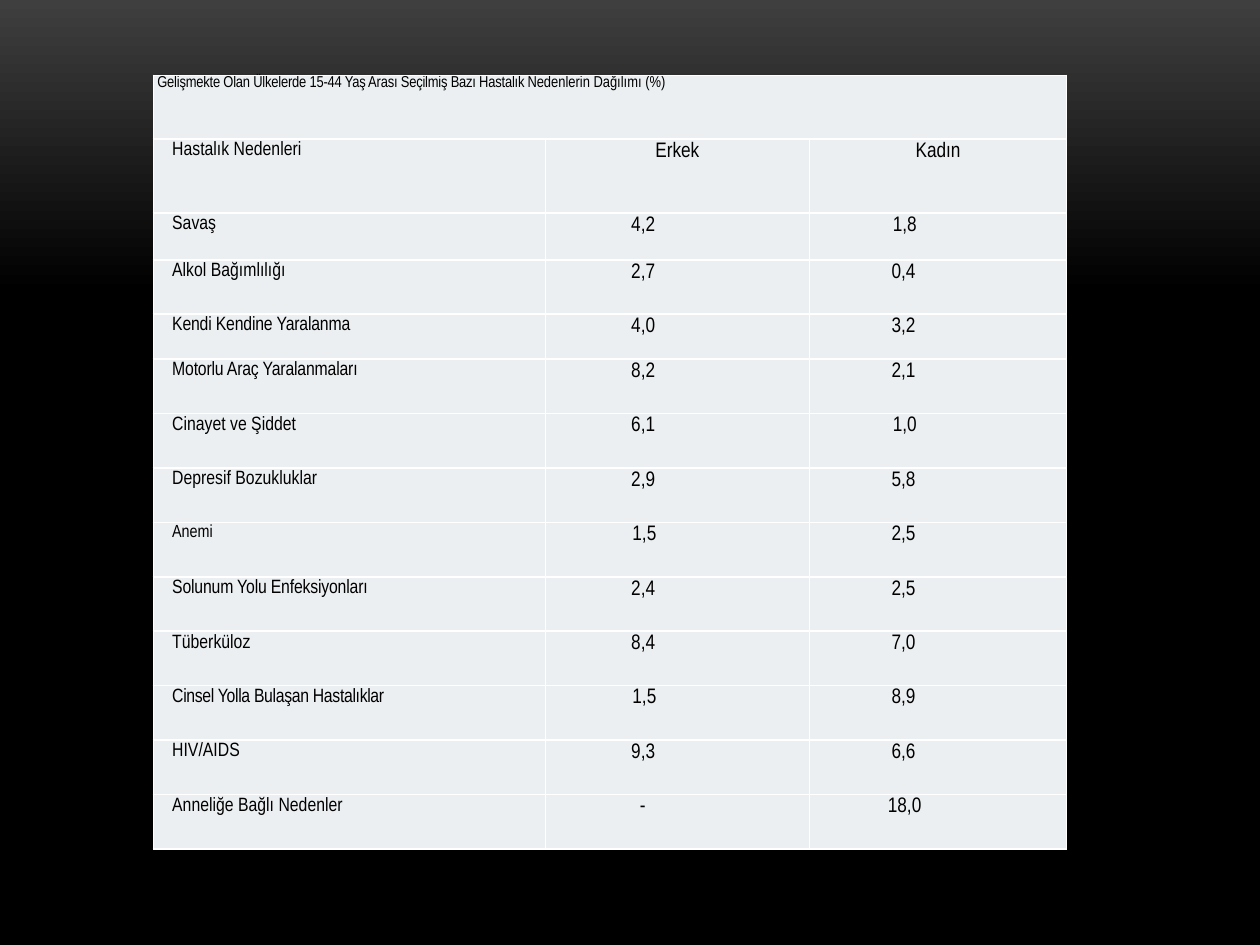
from lxml import etree
from pptx import Presentation
from pptx.dml.color import RGBColor
from pptx.enum.text import MSO_ANCHOR, PP_ALIGN
from pptx.oxml.ns import qn
from pptx.util import Pt

CENTER = PP_ALIGN.CENTER
LEFT = PP_ALIGN.LEFT
TOP = MSO_ANCHOR.TOP

COLORS = {"glow": "3F3F3F", "night": "000000", "cell": "ECEFF1",
          "border": "FFFFFF", "text": "000000"}
FONT = "Arial Narrow"
COLUMN_WIDTHS = [224, 151, 147]
ROW_HEIGHTS = [36.5, 42.3, 26.8, 31, 25.7] + [31.1] * 9

TITLE = [("Gelişmekte Olan Ülkelerde 15-44 Yaş Arası Seçilmiş Bazı Hastalık ", -0.1),
         ("Nedenlerin Dağılımı (%)", 0)]
HEADINGS = ["Hastalık Nedenleri", "Erkek", "Kadın"]
# Cause, men, women, letter spacing of the cause
CAUSES = [
    ("Savaş", "4,2", "1,8", 0),
    ("Alkol Bağımlılığı", "2,7", "0,4", 0),
    ("Kendi Kendine Yaralanma", "4,0", "3,2", -0.1),
    ("Motorlu Araç Yaralanmaları", "8,2", "2,1", -0.1),
    ("Cinayet ve Şiddet", "6,1", "1,0", 0),
    ("Depresif Bozukluklar", "2,9", "5,8", 0),
    ("Anemi", "1,5", "2,5", 0),
    ("Solunum Yolu Enfeksiyonları", "2,4", "2,5", -0.1),
    ("Tüberküloz", "8,4", "7,0", 0),
    ("Cinsel Yolla Bulaşan Hastalıklar", "1,5", "8,9", -0.2),
    ("HIV/AIDS", "9,3", "6,6", 0),
    ("Anneliğe Bağlı Nedenler", "-", "18,0", 0),
]
CAUSE_INDENT, MEN_INDENT, WOMEN_INDENT = 8.5, 46.8, 44.6
# Values whose width or first digit shifts their start
INDENT_SHIFTS = {"1,5": 0.7, "1,8": 0.7, "1,0": 0.7, "-": 5, "18,0": -2.1}


def rgb(name):
    return RGBColor.from_string(COLORS[name])


class SlideBuilder:
    def __init__(self, slide):
        self.slide = slide

    def background(self):
        fill = self.slide.background.fill
        fill.gradient()
        fill.gradient_angle = 270
        for stop, (name, position) in zip(fill.gradient_stops,
                                          [("glow", 0), ("night", 0.31)]):
            stop.color.rgb = rgb(name)
            stop.position = position

    def table(self, left, top, widths, heights):
        frame = self.slide.shapes.add_table(
            len(heights), len(widths), Pt(left), Pt(top),
            Pt(sum(widths)), Pt(sum(heights)))
        table = frame.table
        table.first_row = table.horz_banding = False
        for column, width in zip(table.columns, widths):
            column.width = Pt(width)
        for row, height in zip(table.rows, heights):
            row.height = Pt(height)
        for cell in table.iter_cells():
            self.cell_style(cell)
        return table

    def cell_style(self, cell):
        margins = {"margin_left": Pt(2.3), "margin_right": Pt(2.3),
                   "margin_top": 0, "margin_bottom": 0, "vertical_anchor": TOP}
        for key, value in margins.items():
            setattr(cell, key, value)
        properties = cell._tc.get_or_add_tcPr()
        for side in ("a:lnL", "a:lnR", "a:lnT", "a:lnB"):
            line = etree.SubElement(properties, qn(side), w=str(Pt(1)))
            solid = etree.SubElement(line, qn("a:solidFill"))
            etree.SubElement(solid, qn("a:srgbClr"), val=COLORS["border"])
        cell.fill.solid()
        cell.fill.fore_color.rgb = rgb("cell")

    def cell_text(self, cell, runs, size, indent=0, align=LEFT, spacing=1.15):
        paragraph = cell.text_frame.paragraphs[0]
        paragraph.alignment = align
        paragraph.line_spacing = spacing
        paragraph._p.get_or_add_pPr().set("marL", str(Pt(indent)))
        for text, tracking in runs:
            run = paragraph.add_run()
            run.text = text
            for key, value in {"name": FONT, "size": Pt(size), "bold": False}.items():
                setattr(run.font, key, value)
            run.font.color.rgb = rgb("text")
            run._r.get_or_add_rPr().set("spc", str(round(tracking * 100)))


def main():
    presentation = Presentation()
    presentation.slide_width, presentation.slide_height = Pt(720), Pt(540)
    builder = SlideBuilder(presentation.slides.add_slide(presentation.slide_layouts[6]))
    builder.background()
    diseases = builder.table(87.6, 43, COLUMN_WIDTHS, ROW_HEIGHTS)

    # Title across all columns
    diseases.cell(0, 0).merge(diseases.cell(0, 2))
    builder.cell_text(diseases.cell(0, 0), TITLE, 9, spacing=Pt(9.1))

    # Column headings
    cause_heading, *sex_headings = HEADINGS
    builder.cell_text(diseases.cell(1, 0), [(cause_heading, 0)], 11, CAUSE_INDENT)
    for column, heading in enumerate(sex_headings, 1):
        builder.cell_text(diseases.cell(1, column), [(heading, 0)], 12, align=CENTER)

    # Causes with their shares
    for row, (cause, men, women, tracking) in enumerate(CAUSES, 2):
        cause_size = 10 if cause == "Anemi" else 11
        builder.cell_text(diseases.cell(row, 0), [(cause, tracking)],
                          cause_size, CAUSE_INDENT)
        shares = [(men, MEN_INDENT), (women, WOMEN_INDENT)]
        for column, (share, indent) in enumerate(shares, 1):
            builder.cell_text(diseases.cell(row, column), [(share, 0)], 12,
                              indent + INDENT_SHIFTS.get(share, 0))

    presentation.save("out.pptx")


if __name__ == "__main__":
    main()
